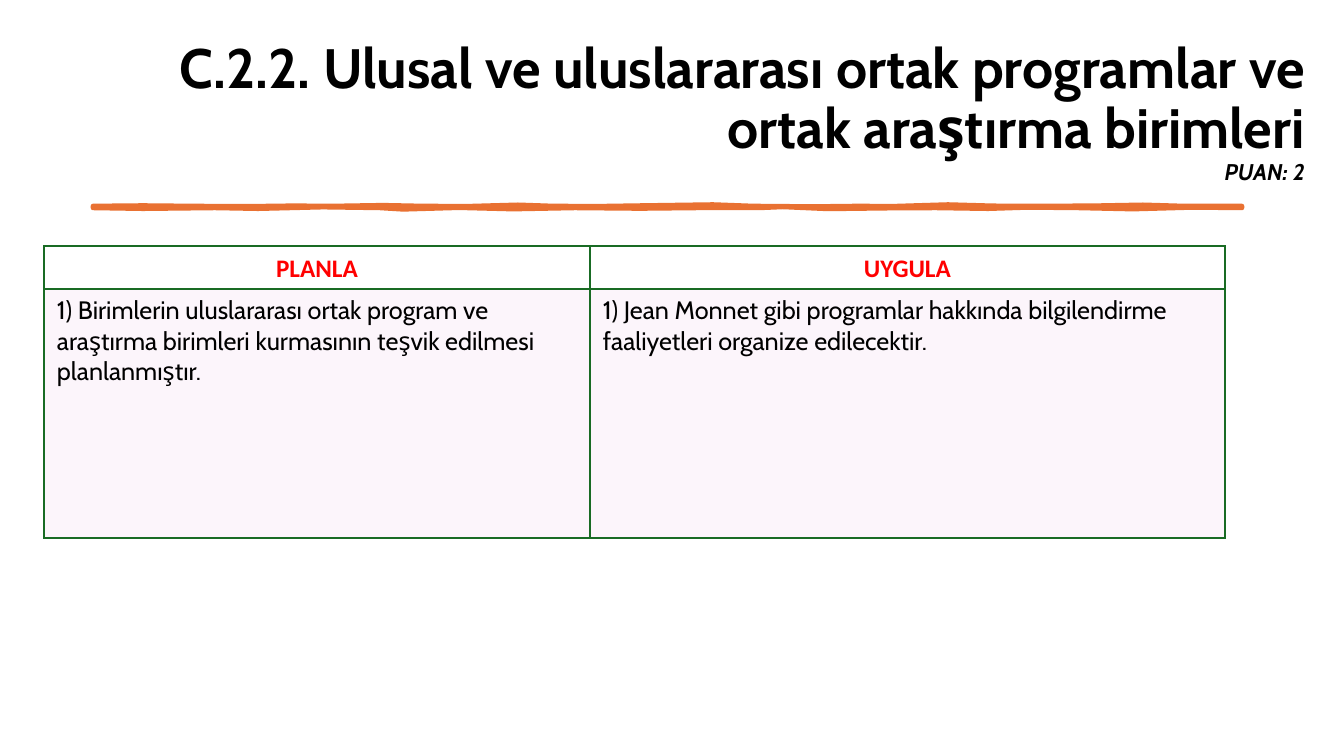
from lxml.etree import SubElement
from pptx import Presentation
from pptx.dml.color import RGBColor
from pptx.enum.text import MSO_ANCHOR, MSO_AUTO_SIZE, PP_ALIGN
from pptx.oxml.ns import qn
from pptx.util import Emu, Pt

EMU_PER_PX = 914400 / 100.8
COLORS = {
    "text": "000000",
    "header": "FF0000",
    "border": "196B24",
    "cell": "F2CFEE",
    "stroke": "E97132",
}
HEADERS = ["PLANLA", "UYGULA"]
ENTRIES = [
    "1) Birimlerin uluslararası ortak program ve araştırma birimleri "
    "kurmasının teşvik edilmesi planlanmıştır.",
    "1) Jean Monnet gibi programlar hakkında bilgilendirme "
    "faaliyetleri organize edilecektir.",
]
# Brush stroke edges: x in px, y in tenths of a px, both from the box corner
STROKE_TOP = [(0, 0), (50, -5), (100, 0), (153, 3), (200, -3), (240, 0),
              (290, -8), (330, 0), (375, 2), (425, -12), (460, 0), (505, 2),
              (550, -5), (620, -15), (660, 0), (720, 5), (765, 0), (800, 2),
              (855, -15), (900, -2), (940, 0), (1000, -3), (1050, -12),
              (1090, 0), (1149, 0)]
STROKE_BOTTOM = [(1149, 20), (1100, 15), (1040, 32), (985, 20), (935, 15),
                 (895, 28), (843, 20), (800, 22), (735, 30), (690, 10),
                 (666, 20), (624, 18), (547, 26), (482, 20), (420, 32),
                 (366, 18), (310, 34), (287, 20), (230, 12), (165, 28),
                 (122, 20), (50, 28), (0, 20)]


def px(length):
    return Emu(round(length * EMU_PER_PX))


def rgb(name):
    return RGBColor.from_string(COLORS[name])


def add_text(paragraph, text, size=18, font="Cabin", color="text",
             bold=False, italic=False, align=None, line_spacing=None,
             space_after=None):
    run = paragraph.add_run()
    run.text = text
    run.font.size = Pt(size)
    run.font.name = font
    run.font.bold = bold
    run.font.italic = italic
    run.font.color.rgb = rgb(color)
    if align is not None:
        paragraph.alignment = align
    if line_spacing is not None:
        paragraph.line_spacing = line_spacing
    if space_after is not None:
        paragraph.space_after = Pt(space_after)


def set_borders(cell, bottom_width=1):
    properties = cell._tc.get_or_add_tcPr()
    for side in "LRTB":
        width = bottom_width if side == "B" else 1
        line = SubElement(properties, qn(f"a:ln{side}"), w=str(Pt(width)))
        fill = SubElement(line, qn("a:solidFill"))
        SubElement(fill, qn("a:srgbClr"), val=COLORS["border"])


def set_margins(cell, horizontal, vertical):
    cell.margin_left = cell.margin_right = px(horizontal)
    cell.margin_top = cell.margin_bottom = px(vertical)


def fill_title(slide, left, top, width, height):
    title = slide.shapes.title
    title.left, title.top = px(left), px(top)
    title.width, title.height = px(width), px(height)
    frame = title.text_frame
    frame.word_wrap = True
    frame.auto_size = MSO_AUTO_SIZE.NONE
    frame.vertical_anchor = MSO_ANCHOR.MIDDLE
    paragraph = frame.paragraphs[0]
    add_text(paragraph, "C.2.2. Ulusal ve uluslararası ortak programlar ve "
             "ortak araştırma birimleri", size=39.6, bold=True,
             align=PP_ALIGN.RIGHT, line_spacing=0.9)
    paragraph.add_line_break()
    add_text(paragraph, "PUAN: 2", size=16.2, bold=True, italic=True)


def add_brush_stroke(slide, left, top):
    points = [((left + x) * 10, top * 10 + y)
              for x, y in STROKE_TOP + STROKE_BOTTOM]
    builder = slide.shapes.build_freeform(*points[0], scale=EMU_PER_PX / 10)
    builder.add_line_segments(points[1:], close=True)
    stroke = builder.convert_to_shape()
    stroke.shadow.inherit = False
    stroke.fill.solid()
    stroke.fill.fore_color.rgb = rgb("stroke")
    stroke.line.color.rgb = rgb("stroke")
    stroke.line.width = Pt(3.25)


def add_plan_table(slide, left, top, column_widths, row_heights):
    table = slide.shapes.add_table(
        len(row_heights), len(column_widths), px(left), px(top),
        px(sum(column_widths)), px(sum(row_heights))).table
    table.first_row = table.horz_banding = False
    for row, height in zip(table.rows, row_heights):
        row.height = px(height)
    for index, width in enumerate(column_widths):
        table.columns[index].width = px(width)

        # Header cell
        header = table.cell(0, index)
        set_borders(header, bottom_width=2)
        header.fill.background()
        header.vertical_anchor = MSO_ANCHOR.MIDDLE
        set_margins(header, 5, 0)
        add_text(header.text_frame.paragraphs[0], HEADERS[index],
                 font="Calibri", color="header", bold=True,
                 align=PP_ALIGN.CENTER, line_spacing=1.07, space_after=8)

        # Entry cell with a translucent fill
        entry = table.cell(1, index)
        set_borders(entry)
        entry.fill.solid()
        entry.fill.fore_color.rgb = rgb("cell")
        tint = entry._tc.tcPr.find(qn("a:solidFill")).find(qn("a:srgbClr"))
        SubElement(tint, qn("a:alpha"), val="20000")
        set_margins(entry, 13, 6)
        add_text(entry.text_frame.paragraphs[0], ENTRIES[index])


def main():
    presentation = Presentation()
    presentation.slide_width, presentation.slide_height = px(1344), px(756)
    slide = presentation.slides.add_slide(presentation.slide_layouts[5])
    fill_title(slide, 35, 40, 1280, 146)
    add_brush_stroke(slide, 93, 206)
    add_plan_table(slide, 44, 246, [546, 635], [43, 249])
    presentation.save("out.pptx")


if __name__ == "__main__":
    main()
